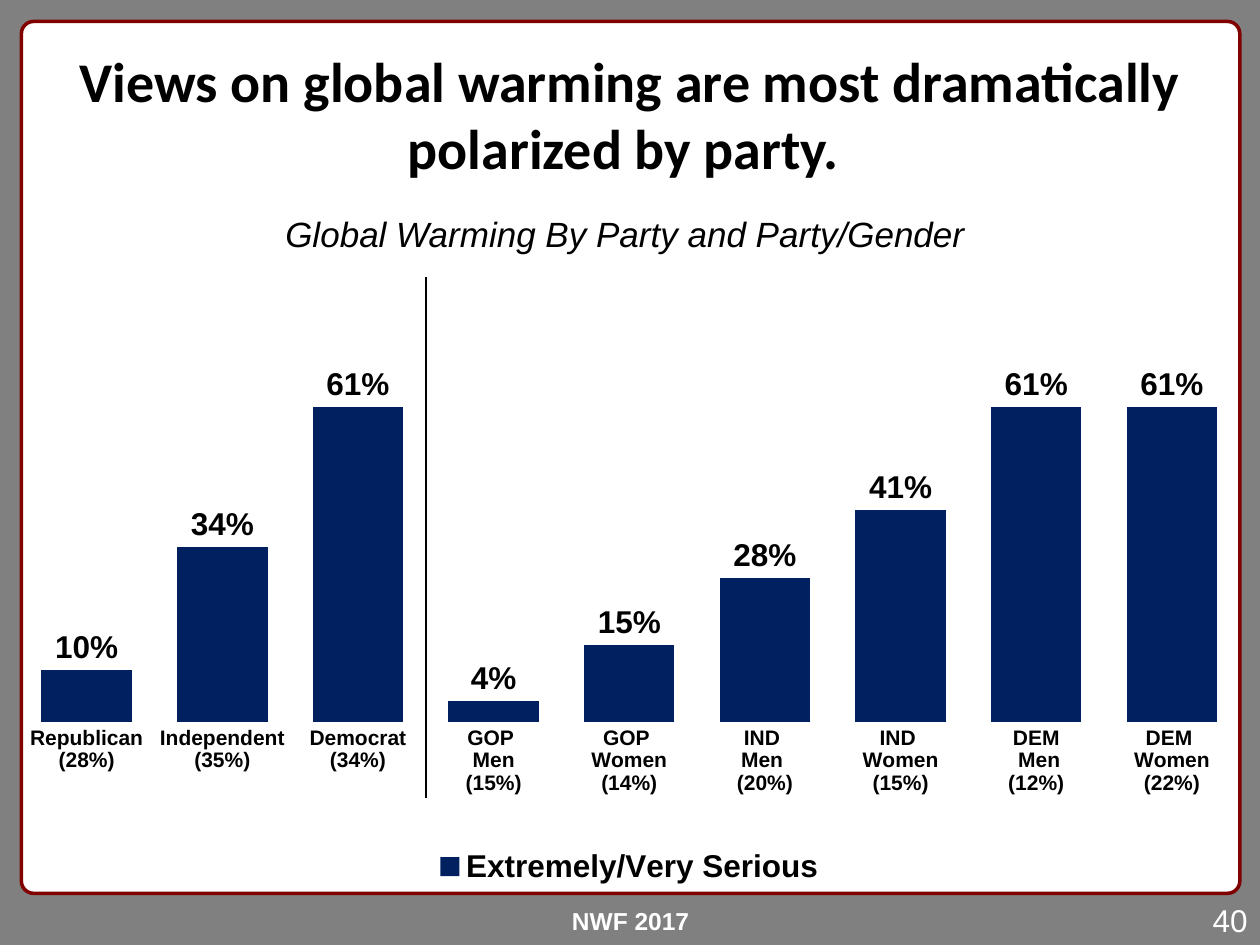
from dataclasses import dataclass

from lxml.etree import SubElement
from pptx import Presentation
from pptx.chart.data import CategoryChartData
from pptx.dml.color import RGBColor
from pptx.enum.chart import XL_CHART_TYPE, XL_LABEL_POSITION, XL_LEGEND_POSITION, XL_TICK_MARK
from pptx.enum.shapes import MSO_CONNECTOR, MSO_SHAPE
from pptx.enum.text import PP_ALIGN
from pptx.oxml import parse_xml
from pptx.oxml.ns import nsdecls, qn
from pptx.util import Inches, Pt


@dataclass(frozen=True)
class Theme:
    """Colours, fonts and type sizes of the deck."""

    backdrop: RGBColor = RGBColor.from_string("808080")
    panel: RGBColor = RGBColor.from_string("FFFFFF")
    border: RGBColor = RGBColor.from_string("800000")
    ink: RGBColor = RGBColor.from_string("000000")
    bar: RGBColor = RGBColor.from_string("002060")
    heading_font: str = "Calibri"
    body_font: str = "Arial"
    title: Pt = Pt(32)
    subtitle: Pt = Pt(20)
    label: Pt = Pt(18)
    footer: Pt = Pt(14)
    category: Pt = Pt(12)


THEME = Theme()

SERIES = "Extremely/Very Serious"
RATINGS = [
    ("Republican\n(28%)", 0.10),
    ("Independent\n(35%)", 0.34),
    ("Democrat\n(34%)", 0.61),
    ("GOP \nMen\n(15%)", 0.04),
    ("GOP \nWomen\n(14%)", 0.15),
    ("IND \nMen \n(20%)", 0.28),
    ("IND \nWomen\n(15%)", 0.41),
    ("DEM\n Men\n(12%)", 0.61),
    ("DEM \nWomen\n(22%)", 0.61),
]


def apply_format(target, values):
    """Set each attribute in values on the target."""
    for name, value in values.items():
        setattr(target, name, value)


def apply_font(font, color, **values):
    """Give a font its colour and other format values."""
    apply_format(font, {"name": THEME.body_font, **values})
    font.color.rgb = color


def add_text(page, box, text, align, color, wrap=True, **values):
    """Place one paragraph of text in the given box."""
    frame = page.shapes.add_textbox(*map(Inches, box)).text_frame
    frame.word_wrap = wrap
    para = frame.paragraphs[0]
    para.alignment = align
    span = para.add_run()
    span.text = text
    apply_font(span.font, color, **values)


def add_panel(page, box):
    """Draw the white rounded panel with its dark red border."""
    panel = page.shapes.add_shape(MSO_SHAPE.ROUNDED_RECTANGLE, *map(Inches, box))
    panel.adjustments[0] = 0.014
    panel.shadow.inherit = False
    panel.fill.solid()
    panel.fill.fore_color.rgb = THEME.panel
    panel.line.color.rgb = THEME.border
    panel.line.width = Pt(2)


def add_heading(page, box):
    """Place the title and the subtitle under it."""
    left, top, width, height = box
    add_text(page, (left, top, width, 1.18),
             "Views on global warming are most dramatically polarized by party. ",
             PP_ALIGN.CENTER, THEME.ink, name=THEME.heading_font, size=THEME.title, bold=True)
    add_text(page, (left + 0.79, top + height - 0.44, 8.08, 0.44),
             "Global Warming By Party and Party/Gender ",
             PP_ALIGN.CENTER, THEME.ink, size=THEME.subtitle, italic=True)


def set_plot_layout(chart, x, y, w, h):
    """Fix the inner plot area as fractions of the chart."""
    plot_area = chart.element.find(f".//{qn('c:plotArea')}")
    for layout in plot_area.findall(qn("c:layout")):
        plot_area.remove(layout)
    settings = {"layoutTarget": "inner", "xMode": "edge", "yMode": "edge",
                "x": x, "y": y, "w": w, "h": h}
    parts = "".join(f'<c:{tag} val="{value}"/>' for tag, value in settings.items())
    plot_area.insert(0, parse_xml(
        f"<c:layout {nsdecls('c')}><c:manualLayout>{parts}</c:manualLayout></c:layout>"))


def add_ratings_chart(page, box):
    """Build the column chart of ratings by party and gender."""
    data = CategoryChartData(number_format="0%")
    data.categories = [group for group, _ in RATINGS]
    data.add_series(SERIES, [share for _, share in RATINGS])
    chart = page.shapes.add_chart(
        XL_CHART_TYPE.COLUMN_CLUSTERED, *map(Inches, box), data).chart
    apply_font(chart.font, THEME.ink, size=THEME.label, bold=True)
    apply_format(chart, {"has_title": False, "has_legend": True})
    apply_format(chart.legend, {"position": XL_LEGEND_POSITION.BOTTOM,
                                "include_in_layout": False})

    plot = chart.plots[0]
    apply_format(plot, {"gap_width": 50, "vary_by_categories": False, "has_data_labels": True})
    apply_format(plot.data_labels, {
        "show_value": True, "number_format": "0%", "number_format_is_linked": False,
        "position": XL_LABEL_POSITION.OUTSIDE_END})
    apply_font(plot.data_labels.font, THEME.ink, size=THEME.label, bold=True)
    fill = plot.series[0].format.fill
    fill.solid()
    fill.fore_color.rgb = THEME.bar

    apply_format(chart.value_axis, {
        "minimum_scale": 0, "maximum_scale": 0.7, "major_unit": 0.1,
        "has_major_gridlines": False, "visible": False})
    groups = chart.category_axis
    apply_format(groups, {"major_tick_mark": XL_TICK_MARK.NONE,
                          "minor_tick_mark": XL_TICK_MARK.NONE})
    groups.format.line.fill.background()
    apply_font(groups.tick_labels.font, THEME.ink, size=THEME.category, bold=True)
    set_plot_layout(chart, 0, 0.12, 1, 0.6)


def add_divider(page, box):
    """Draw the line between the party and the party/gender columns."""
    left, top, width, height = box
    divider = page.shapes.add_connector(
        MSO_CONNECTOR.STRAIGHT, *map(Inches, (left, top, left + width, top + height)))
    divider.line.color.rgb = THEME.ink
    divider.line.width = Pt(0.75)
    SubElement(divider.element.spPr, qn("a:effectLst"))


def add_footer(page, box):
    """Place the centred footer and the page number at the right."""
    left, top, width, height = box
    add_text(page, (left + 2.42, top + 0.04, 5.17, 0.33), "NWF 2017",
             PP_ALIGN.CENTER, THEME.panel, wrap=False, size=THEME.footer, bold=True)
    add_text(page, (left + width - 1.54, top, 1.54, height), "40",
             PP_ALIGN.RIGHT, THEME.panel, size=THEME.label)


def main():
    """Build the slide and save the deck."""
    deck = Presentation()
    apply_format(deck, {"slide_width": Inches(10), "slide_height": Inches(7.5)})
    page = deck.slides.add_slide(deck.slide_layouts[6])
    page.background.fill.solid()
    page.background.fill.fore_color.rgb = THEME.backdrop
    add_panel(page, (0.17, 0.17, 9.67, 6.92))
    add_footer(page, (0, 7.1, 10, 0.4))
    add_ratings_chart(page, (0.15, 2.29, 9.69, 4.78))
    add_divider(page, (3.38, 2.2, 0, 4.13))
    add_heading(page, (0.17, 0.32, 9.66, 1.76))
    deck.save("out.pptx")


if __name__ == "__main__":
    main()
